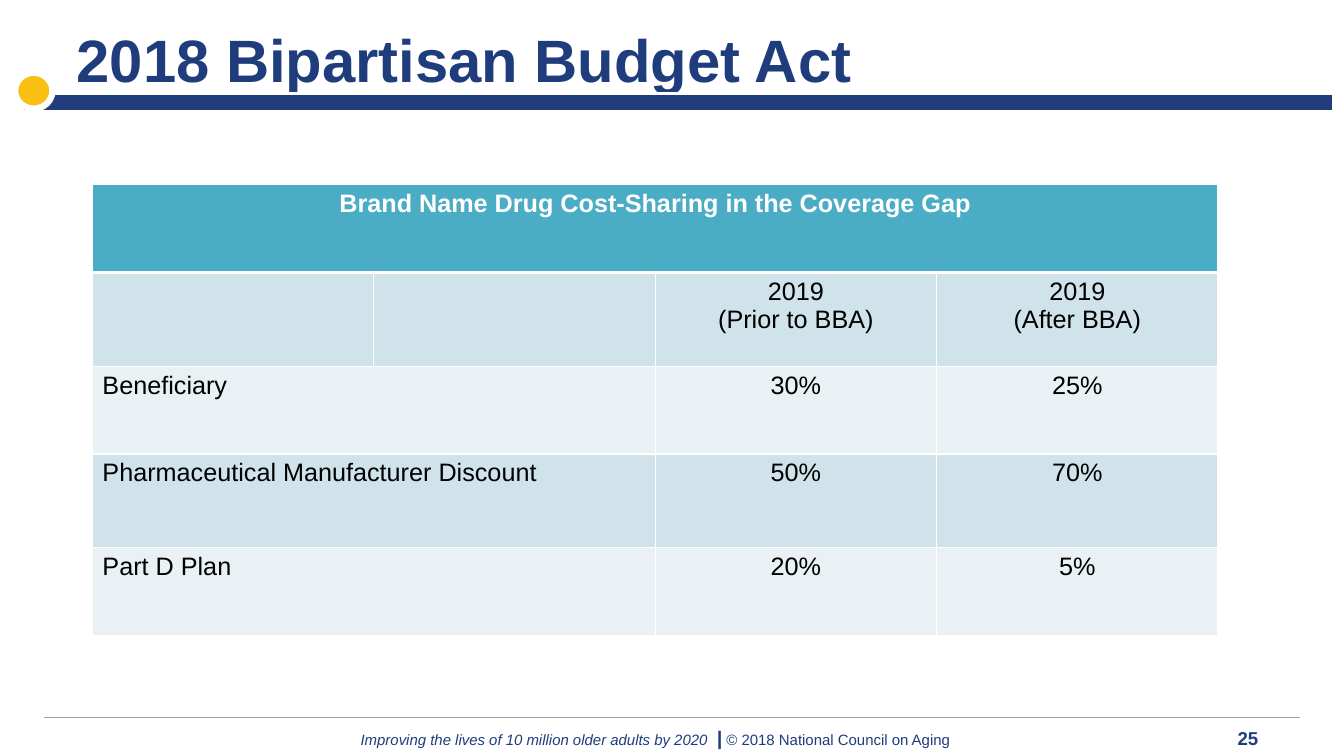
from lxml import etree
from pptx import Presentation
from pptx.dml.color import RGBColor as RGB
from pptx.enum.shapes import MSO_CONNECTOR as CONN, MSO_SHAPE as SHAPE
from pptx.enum.text import MSO_ANCHOR as ANCHOR, MSO_AUTO_SIZE as FIT, PP_ALIGN as ALIGN
from pptx.oxml.ns import qn
from pptx.util import Inches, Pt

NAVY = RGB(0x1F, 0x3D, 0x7C)
GOLD = RGB(0xF9, 0xBF, 0x12)
GREY = RGB(0xA6, 0xA6, 0xA6)
TEAL = RGB(0x4B, 0xAC, 0xC6)
BAND = RGB(0xD0, 0xE3, 0xEA)
PALE = RGB(0xE9, 0xF1, 0xF5)
WHITE = RGB(0xFF, 0xFF, 0xFF)
BLACK = RGB(0, 0, 0)

COLS, ROWS = 32, 18  # square grid over the whole slide


class SlideBuilder:
    font = "Arial"

    def __init__(self, prs):
        self.slide = prs.slides.add_slide(prs.slide_layouts[5])
        self.shapes = self.slide.shapes
        self.col, self.row = prs.slide_width / COLS, prs.slide_height / ROWS

    def grid(self, x, y, *size):
        units = (self.col, self.row) * 2
        return [round(n * u) for n, u in zip((x, y, *size), units)]

    def run(self, p, text, size, color, **fmt):
        r = p.add_run()
        r.text = text
        r.font.color.rgb = color
        for key, value in {"name": self.font, "size": Pt(size), "bold": False, **fmt}.items():
            setattr(r.font, key, value)

    def frame(self, tf, **fmt):
        for key, value in {"word_wrap": True, "auto_size": FIT.NONE, **fmt}.items():
            setattr(tf, key, value)

    def title(self, text, box, size, color):
        sp = self.shapes.title
        sp.left, sp.top, sp.width, sp.height = self.grid(*box)
        self.frame(sp.text_frame, vertical_anchor=ANCHOR.MIDDLE, margin_left=Inches(0.26))
        p = sp.text_frame.paragraphs[0]
        p.alignment = ALIGN.LEFT
        self.run(p, text, size, color, bold=True)

    def shape(self, kind, box, fill, line, width):
        sp = self.shapes.add_shape(kind, *self.grid(*box))
        sp.shadow.inherit = False
        sp.fill.solid()
        sp.fill.fore_color.rgb = fill
        sp.line.color.rgb = line
        sp.line.width = Pt(width)

    def rule(self, start, end, color, width):
        cx = self.shapes.add_connector(CONN.STRAIGHT, *self.grid(*start), *self.grid(*end))
        cx.line.color.rgb = color
        cx.line.width = Pt(width)
        etree.SubElement(cx._element.spPr, qn("a:effectLst"))

    def tabbed_text(self, box, stops, runs, color):
        tf = self.shapes.add_textbox(*self.grid(*box)).text_frame
        self.frame(tf)
        p = tf.paragraphs[0]
        tabs = etree.SubElement(p._p.get_or_add_pPr(), qn("a:tabLst"))
        for stop in stops:
            etree.SubElement(tabs, qn("a:tab"), pos=str(round(stop * self.col)), algn="l")
        for text, size, fmt in runs:
            self.run(p, text, size, color, **fmt)

    def borders(self, cell, **widths):
        tc_pr = cell._tc.get_or_add_tcPr()
        for side in "LRTB":
            ln = etree.SubElement(tc_pr, qn("a:ln" + side), w=str(Pt(widths.get(side, 1))))
            fill = etree.SubElement(ln, qn("a:solidFill"))
            etree.SubElement(fill, qn("a:srgbClr"), val=str(WHITE))

    def table(self, origin, col_width, heights, rows, fills, spans, size):
        n = len(rows[0])
        box = self.grid(*origin, n * col_width, sum(heights))
        table = self.shapes.add_table(len(rows), n, *box).table
        table.horz_banding = False
        for i, (texts, fill, span) in enumerate(zip(rows, fills, spans)):
            table.rows[i].height = round(heights[i] * self.row)
            head = i == 0
            for j, text in enumerate(texts):
                cell = table.cell(i, j)
                self.borders(cell, T=3 if i == 1 else 1, B=3 if head else 1)
                cell.fill.solid()
                cell.fill.fore_color.rgb = fill
                lines = text.split("\n") if text else []
                for k, line in enumerate(lines):
                    tf = cell.text_frame
                    p = tf.add_paragraph() if k else tf.paragraphs[0]
                    p.alignment = ALIGN.CENTER if head or j > 1 else ALIGN.LEFT
                    self.run(p, line, size, WHITE if head else BLACK, bold=head)
            if span > 1:
                table.cell(i, 0).merge(table.cell(i, span - 1))
        for column in table.columns:
            column.width = round(col_width * self.col)


def main():
    prs = Presentation()
    prs.slide_width, prs.slide_height = Inches(13.33), Inches(7.5)
    s = SlideBuilder(prs)

    # Footer
    s.tabbed_text((8.35, 17.16, 23.04, 0.82), (8.48, 20.88), [
        ("Improving the lives of 10 million older adults by 2020\t", 10.7, {"italic": True}),
        ("|", 14, {"bold": True, "italic": True}),
        (" © 2018 National Council on Aging\t", 10.7, {}),
        ("25", 13.3, {"bold": True}),
    ], NAVY)
    s.rule((1.06, 17.09), (30.96, 17.09), GREY, 0.5)

    # Header band and title
    s.shape(SHAPE.RECTANGLE, (0.55, 2.23, 31.2, 0.43), NAVY, WHITE, 2)
    s.shape(SHAPE.OVAL, (0.36, 1.73, 0.89, 0.86), GOLD, WHITE, 4.5)
    s.title("2018 Bipartisan Budget Act", (1.2, 0.29, 30.53, 2.21), 42.7, NAVY)

    # Cost-sharing table
    s.table((2.2, 4.4), 6.7, (2.09, 2.23, 2.09, 2.23, 2.09), [
        ("Brand Name Drug Cost-Sharing in the Coverage Gap", "", "", ""),
        ("", "", "2019\n(Prior to BBA)", "2019\n(After BBA)"),
        ("Beneficiary", "", "30%", "25%"),
        ("Pharmaceutical Manufacturer Discount", "", "50%", "70%"),
        ("Part D Plan", "", "20%", "5%"),
    ], (TEAL, BAND, PALE, BAND, PALE), (4, 1, 2, 2, 2), 18)

    prs.save("out.pptx")


if __name__ == "__main__":
    main()
